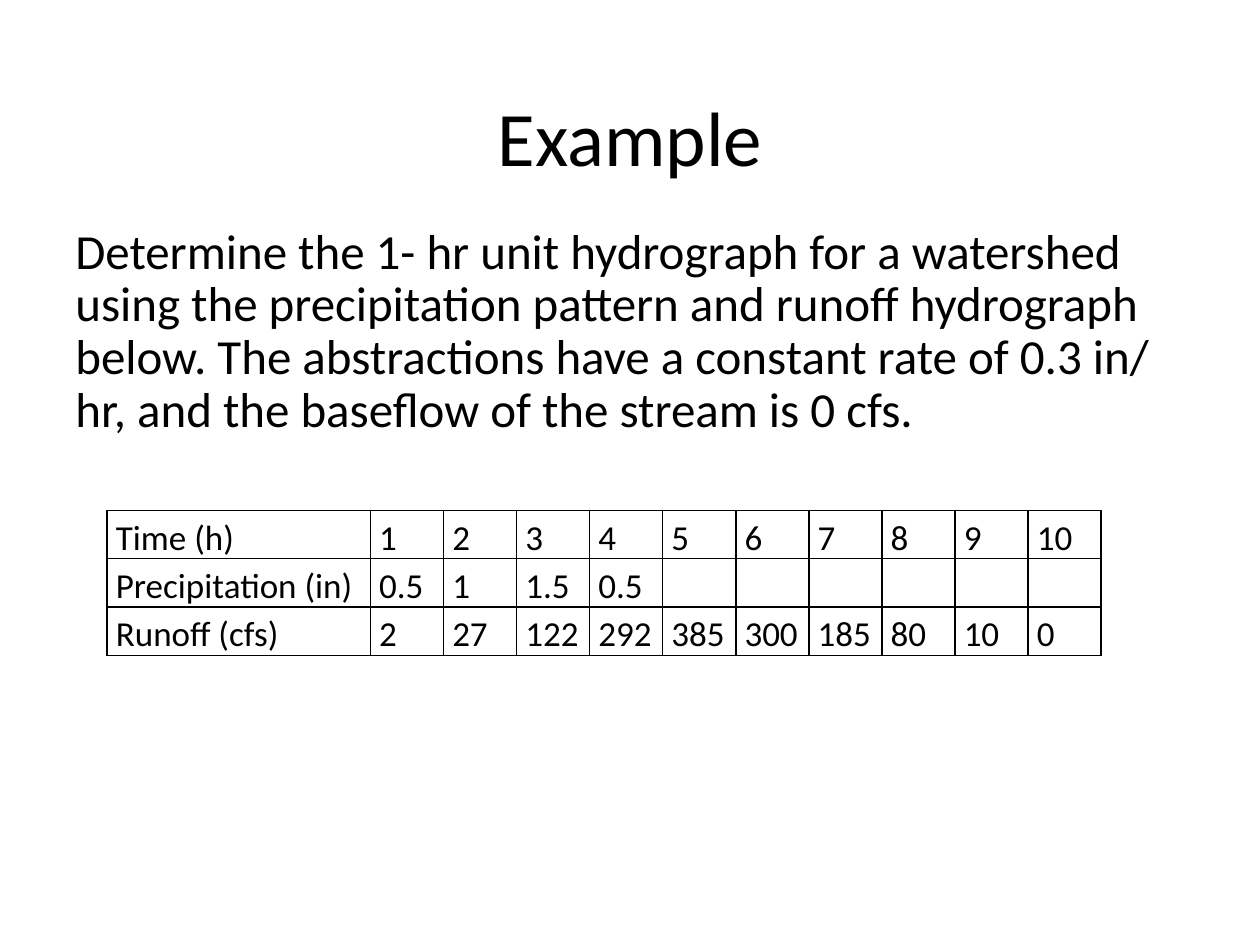
from dataclasses import dataclass

from lxml import etree
from pptx import Presentation
from pptx.dml.color import RGBColor
from pptx.enum.text import MSO_ANCHOR, PP_ALIGN
from pptx.oxml.ns import qn
from pptx.util import Inches, Pt

CENTER = PP_ALIGN.CENTER
LEFT = PP_ALIGN.LEFT
MIDDLE = MSO_ANCHOR.MIDDLE
TOP = MSO_ANCHOR.TOP
TITLE_ONLY = 5


@dataclass(frozen=True)
class Theme:
    """Colours, font and type sizes of the slide."""
    font: str = "Calibri"
    ink: str = "000000"
    title_size: int = 44
    body_size: int = 28
    table_size: int = 20
    border_width: int = 1


THEME = Theme()
TITLE = "Example"
PROBLEM = (
    "Determine the 1- hr unit hydrograph for a watershed using the "
    "precipitation pattern and runoff hydrograph below. The abstractions "
    "have a constant rate of 0.3 in/ hr, and the baseflow of the stream is 0 cfs."
)
HYDROGRAPH = [
    ("Time (h)", [1, 2, 3, 4, 5, 6, 7, 8, 9, 10]),
    ("Precipitation (in)", [0.5, 1, 1.5, 0.5] + [""] * 6),
    ("Runoff (cfs)", [2, 27, 122, 292, 385, 300, 185, 80, 10, 0]),
]


def style_text(text_frame, size, line_spacing, alignment=LEFT):
    """Format every paragraph and run of a text frame."""
    for paragraph in text_frame.paragraphs:
        paragraph.alignment = alignment
        paragraph.line_spacing = line_spacing
        for run in paragraph.runs:
            run.font.name = THEME.font
            run.font.size = Pt(size)
            run.font.color.rgb = RGBColor.from_string(THEME.ink)


def set_borders(cell):
    """Draw a solid line on all four sides of a cell."""
    properties = cell._tc.get_or_add_tcPr()
    for index, side in enumerate(("a:lnL", "a:lnR", "a:lnT", "a:lnB")):
        line = etree.Element(qn(side), w=str(Pt(THEME.border_width)))
        fill = etree.SubElement(line, qn("a:solidFill"))
        etree.SubElement(fill, qn("a:srgbClr"), val=THEME.ink)
        properties.insert(index, line)


def add_title(slide, left, top, width, height):
    """Place the centred slide title."""
    title = slide.shapes.title
    title.left, title.top, title.width, title.height = left, top, width, height
    title.text_frame.text = TITLE
    title.text_frame.vertical_anchor = MIDDLE
    style_text(title.text_frame, THEME.title_size, 0.9, CENTER)


def add_problem(slide, left, top, width, height):
    """Place the problem statement."""
    text_frame = slide.shapes.add_textbox(left, top, width, height).text_frame
    text_frame.word_wrap = True
    text_frame.vertical_anchor = TOP
    text_frame.text = PROBLEM
    text_frame.paragraphs[0].space_before = Pt(10)
    style_text(text_frame, THEME.body_size, 0.9)


def add_hydrograph_table(slide, left, top, width, height):
    """Place the table with a label column and equal value columns."""
    value_count = len(HYDROGRAPH[0][1])
    table = slide.shapes.add_table(
        len(HYDROGRAPH), value_count + 1, left, top, width, height
    ).table
    table.first_row = False
    table.horz_banding = False
    value_width = Inches(0.58)
    for column in table.columns:
        column.width = value_width
    table.columns[0].width = width - value_count * value_width

    for row_index, (label, values) in enumerate(HYDROGRAPH):
        for column_index, value in enumerate([label, *values]):
            cell = table.cell(row_index, column_index)
            cell.margin_left = cell.margin_right = Inches(0.07)
            cell.margin_top = cell.margin_bottom = 0
            cell.fill.background()
            cell.text_frame.text = str(value)
            style_text(cell.text_frame, THEME.table_size, 1.15)
            set_borders(cell)


def main():
    """Build and save the example slide."""
    presentation = Presentation()
    presentation.slide_width = Inches(10)
    presentation.slide_height = Inches(7.5)
    slide = presentation.slides.add_slide(presentation.slide_layouts[TITLE_ONLY])
    add_title(slide, Inches(0.69), Inches(0.4), Inches(8.62), Inches(1.45))
    add_problem(slide, Inches(0.5), Inches(1.75), Inches(9), Inches(2.23))
    add_hydrograph_table(slide, Inches(0.85), Inches(4.05), Inches(7.89), Inches(1.08))
    presentation.save("out.pptx")


if __name__ == "__main__":
    main()
